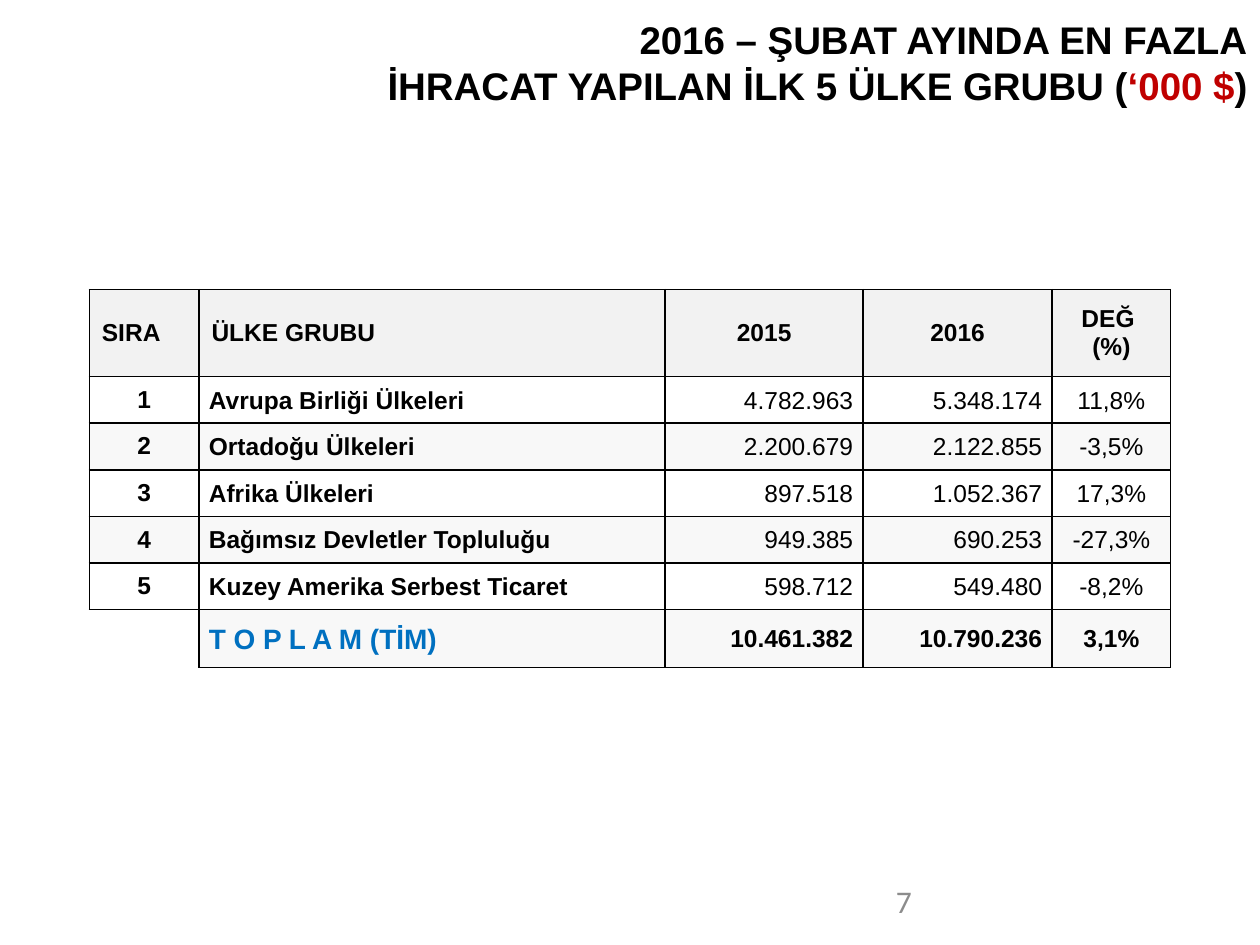
"""Builds the slide of the top five export country groups."""
import lxml.etree
import pptx
import pptx.dml.color
import pptx.enum.text
import pptx.oxml.ns
import pptx.util

Cm, Pt = pptx.util.Cm, pptx.util.Pt
ALIGN = pptx.enum.text.PP_ALIGN
MIDDLE = pptx.enum.text.MSO_ANCHOR.MIDDLE

COLORS = {"text": "000000", "accent": "C00000", "total": "0070C0",
          "head": "F2F2F2", "band": "F8F8F8", "page": "8C8C8C"}
TITLE = [
    [("2016 – ŞUBAT AYINDA EN FAZLA", "text")],
    [("İHRACAT YAPILAN İLK 5 ÜLKE GRUBU (", "text"), ("‘000 $", "accent"), (")", "text")],
]
PAGE = "7"
HEAD = ["SIRA", "ÜLKE GRUBU", "2015", "2016", "DEĞ \n(%)"]
GROUPS = [
    ["1", "Avrupa Birliği Ülkeleri", "4.782.963", "5.348.174", "11,8%"],
    ["2", "Ortadoğu Ülkeleri", "2.200.679", "2.122.855", "-3,5%"],
    ["3", "Afrika Ülkeleri", "897.518", "1.052.367", "17,3%"],
    ["4", "Bağımsız Devletler Topluluğu", "949.385", "690.253", "-27,3%"],
    ["5", "Kuzey Amerika Serbest Ticaret", "598.712", "549.480", "-8,2%"],
]
TOTAL = ["", "T O P L A M (TİM)", "10.461.382", "10.790.236", "3,1%"]
ROWS = [HEAD, *GROUPS, TOTAL]
LAST = len(ROWS) - 1
WIDTHS = [2.21, 9.4, 3.99, 3.81, 2.39]
HEIGHTS = [1.75] + [0.94] * len(GROUPS) + [1.17]
HEADALIGN = [ALIGN.LEFT, ALIGN.LEFT, ALIGN.CENTER, ALIGN.CENTER, ALIGN.CENTER]
BODYALIGN = [ALIGN.CENTER, ALIGN.LEFT, ALIGN.RIGHT, ALIGN.RIGHT, ALIGN.CENTER]


def color(name):
    """Return the named colour."""
    return pptx.dml.color.RGBColor.from_string(COLORS[name])


def style(font, size, name="text", bold=False, face="Arial"):
    """Format a font."""
    font.name, font.size, font.bold = face, Pt(size), bold
    font.color.rgb = color(name)


def place(shape, left, top, width, height):
    """Move and size a shape, in centimetres."""
    shape.left, shape.top = Cm(left), Cm(top)
    shape.width, shape.height = Cm(width), Cm(height)


def border(cell, sides):
    """Draw black lines on the given sides and none on the others."""
    props = cell._tc.get_or_add_tcPr()
    tag = pptx.oxml.ns.qn
    for side in "LRTB":
        line = lxml.etree.SubElement(props, tag("a:ln" + side), w=str(Pt(1)))
        if side in sides:
            fill = lxml.etree.SubElement(line, tag("a:solidFill"))
            lxml.etree.SubElement(fill, tag("a:srgbClr"), val=COLORS["text"])
        else:
            lxml.etree.SubElement(line, tag("a:noFill"))


def format_cell(cell, row, col):
    """Fill, outline and set the text of one table cell."""
    blank = row == LAST and col == 0
    border(cell, "RT" if blank else "LRTB")
    if blank or (row % 2 and row > 0):
        cell.fill.background()
    else:
        cell.fill.solid()
        cell.fill.fore_color.rgb = color("band" if row else "head")
    cell.vertical_anchor = MIDDLE
    if row and col:
        cell.margin_left = Cm(0.2 if col == 1 else 0.03)
        cell.margin_right = Cm(0.2 if col in (2, 3) else 0.03)
        cell.margin_top, cell.margin_bottom = Cm(0.03), 0
    label = row == LAST and col == 1
    cell.text = ROWS[row][col]
    for para in cell.text_frame.paragraphs:
        para.alignment = (BODYALIGN if row else HEADALIGN)[col]
        style(para.font, 16 if label else 14, "total" if label else "text",
              row in (0, LAST) or col < 2)


def add_title(slide):
    """Fill the title placeholder."""
    title = slide.shapes.title
    place(title, 2.69, 0.18, 22.71, 2.13)
    frame = title.text_frame
    frame.vertical_anchor = MIDDLE
    frame.auto_size = pptx.enum.text.MSO_AUTO_SIZE.SHAPE_TO_FIT_TEXT
    for row, parts in enumerate(TITLE):
        para = frame.add_paragraph() if row else frame.paragraphs[0]
        para.alignment = ALIGN.RIGHT
        for text, name in parts:
            run = para.add_run()
            run.text = text
            style(run.font, 22, name, True)


def add_table(slide):
    """Add the table of country groups."""
    table = slide.shapes.add_table(
        len(ROWS), len(HEAD), Cm(1.8), Cm(5.84), Cm(sum(WIDTHS)), Cm(sum(HEIGHTS))).table
    table.first_row = table.horz_banding = False
    for col, width in zip(table.columns, WIDTHS):
        col.width = Cm(width)
    for row, height in enumerate(HEIGHTS):
        table.rows[row].height = Cm(height)
        for col in range(len(HEAD)):
            format_cell(table.cell(row, col), row, col)


def add_page(slide):
    """Add the page number."""
    box = slide.shapes.add_textbox(Cm(17.81), Cm(17.65), Cm(5.33), Cm(1.02))
    frame = box.text_frame
    frame.word_wrap, frame.vertical_anchor = True, MIDDLE
    frame.text = PAGE
    style(frame.paragraphs[0].font, 18, "page", face="Calibri")


def main():
    """Build and save the deck."""
    deck = pptx.Presentation()
    deck.slide_width, deck.slide_height = Cm(25.4), Cm(19.05)
    slide = deck.slides.add_slide(deck.slide_layouts[5])
    add_title(slide)
    add_table(slide)
    add_page(slide)
    deck.save("out.pptx")


if __name__ == "__main__":
    main()
